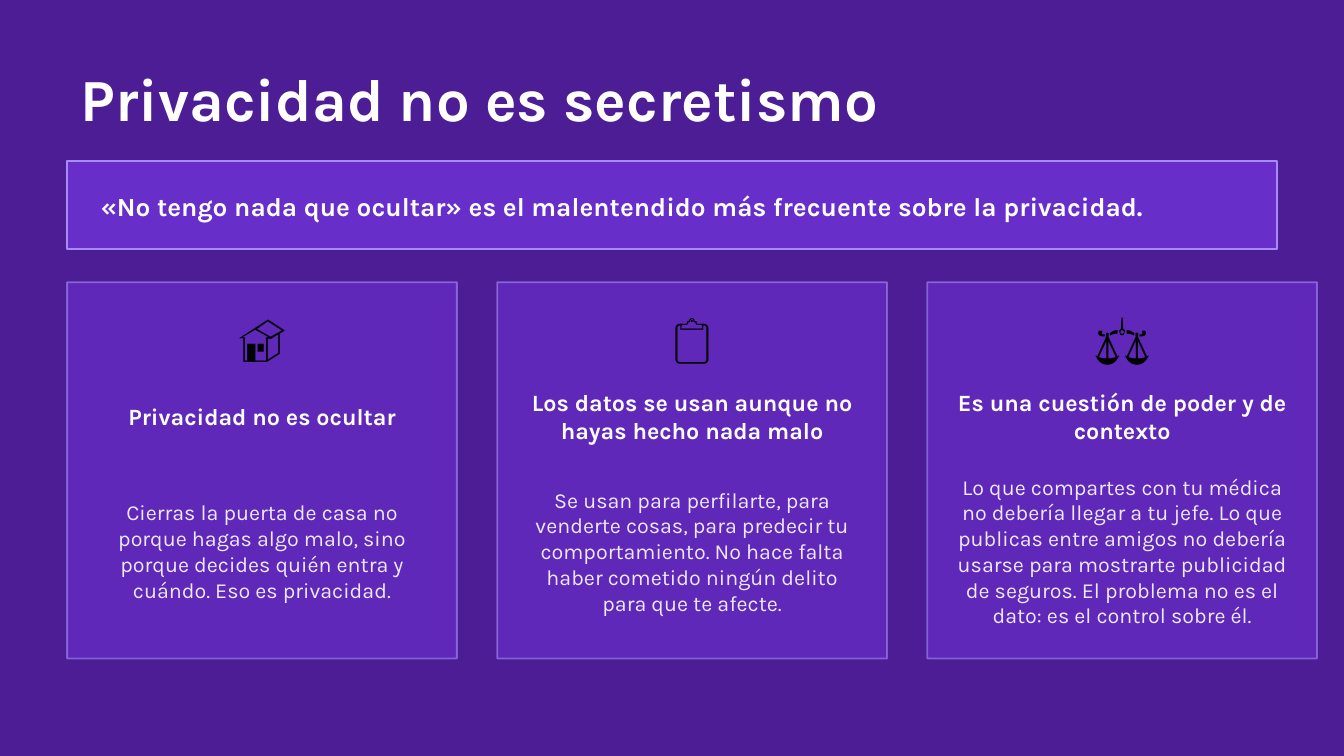
from lxml import etree
from pptx import Presentation
from pptx.dml.color import RGBColor
from pptx.enum.shapes import MSO_SHAPE
from pptx.enum.text import MSO_ANCHOR, MSO_AUTO_SIZE, PP_ALIGN
from pptx.oxml.ns import qn
from pptx.util import Inches, Pt

RECTANGLE = MSO_SHAPE.RECTANGLE
MIDDLE = MSO_ANCHOR.MIDDLE
NO_AUTOFIT = MSO_AUTO_SIZE.NONE
LEFT, CENTER = PP_ALIGN.LEFT, PP_ALIGN.CENTER

TITLE_ONLY = 5
BACKGROUND = "4C1D95"
PANEL = "7C3AED"
BORDER = "A78BFA"
WHITE = "FFFFFF"
LAVENDER = "EDE9FE"
BLACK = "000000"

MARGIN = 0.5
CARD_TOP, CARD_WIDTH, CARD_HEIGHT = 2.1, 2.9, 2.8
CARD_STEP = 3.2
CARD_PADDING = 0.1

CARDS = [
    ("🏠", "Privacidad no es ocultar",
     "Cierras la puerta de casa no porque hagas algo malo, sino porque decides "
     "quién entra y cuándo. Eso es privacidad."),
    ("📋", "Los datos se usan aunque no hayas hecho nada malo",
     "Se usan para perfilarte, para venderte cosas, para predecir tu "
     "comportamiento. No hace falta haber cometido ningún delito para que te afecte."),
    ("⚖️", "Es una cuestión de poder y de contexto",
     "Lo que compartes con tu médica no debería llegar a tu jefe. Lo que publicas "
     "entre amigos no debería usarse para mostrarte publicidad de seguros. "
     "El problema no es el dato: es el control sobre él."),
]


def color(hex_code):
    return RGBColor.from_string(hex_code)


def set_opacity(fill, percent):
    """Apply an opacity to a solid fill whose colour is already set."""
    fill_color = fill._xPr.find(qn("a:solidFill"))[0]
    etree.SubElement(fill_color, qn("a:alpha"), val=str(percent * 1000))


def write_text(shape, text, size, hex_code, bold=False, align=LEFT, font_name="Karla"):
    frame = shape.text_frame
    frame.word_wrap = True
    frame.auto_size = NO_AUTOFIT
    frame.vertical_anchor = MIDDLE
    frame.text = text
    paragraph = frame.paragraphs[0]
    paragraph.alignment = align
    font = paragraph.font
    font.name = font_name
    font.size = Pt(size)
    font.bold = bold
    font.color.rgb = color(hex_code)


def add_title(slide, text):
    title = slide.shapes.title
    title.left, title.top = Inches(MARGIN), Inches(0.35)
    title.width, title.height = Inches(9), Inches(0.75)
    write_text(title, text, 32, WHITE, bold=True)


def add_label(slide, left, top, width, height, text, size, hex_code, **style):
    box = slide.shapes.add_textbox(
        Inches(left), Inches(top), Inches(width), Inches(height))
    write_text(box, text, size, hex_code, **style)


def add_panel(slide, left, top, width, height, fill_opacity, line_opacity=100):
    panel = slide.shapes.add_shape(
        RECTANGLE, Inches(left), Inches(top), Inches(width), Inches(height))
    panel.shadow.inherit = False
    panel.fill.solid()
    panel.fill.fore_color.rgb = color(PANEL)
    set_opacity(panel.fill, fill_opacity)
    panel.line.width = Pt(1)
    panel.line.color.rgb = color(BORDER)
    if line_opacity < 100:
        set_opacity(panel.line.fill, line_opacity)


def add_banner(slide, text):
    add_panel(slide, MARGIN, 1.2, 9, 0.65, fill_opacity=60)
    add_label(slide, MARGIN + 0.15, 1.28, 8.7, 0.5, text, 14, WHITE, bold=True)


def add_card(slide, left, icon, heading, body):
    text_left = left + CARD_PADDING
    text_width = CARD_WIDTH - 2 * CARD_PADDING
    add_panel(slide, left, CARD_TOP, CARD_WIDTH, CARD_HEIGHT,
              fill_opacity=40, line_opacity=60)
    add_label(slide, left, 2.2, CARD_WIDTH, 0.6, icon, 26, BLACK,
              align=CENTER, font_name="Calibri")
    add_label(slide, text_left, 2.85, text_width, 0.5, heading, 12.5, WHITE,
              bold=True, align=CENTER)
    add_label(slide, text_left, 3.4, text_width, 1.4, body, 11.5, LAVENDER,
              align=CENTER)


def main():
    presentation = Presentation()
    presentation.slide_width = Inches(10)
    presentation.slide_height = Inches(10) * 9 // 16
    slide = presentation.slides.add_slide(presentation.slide_layouts[TITLE_ONLY])
    slide.background.fill.solid()
    slide.background.fill.fore_color.rgb = color(BACKGROUND)

    add_title(slide, "Privacidad no es secretismo")
    add_banner(slide, "«No tengo nada que ocultar» es el malentendido más "
                      "frecuente sobre la privacidad.")
    for index, (icon, heading, body) in enumerate(CARDS):
        add_card(slide, MARGIN + index * CARD_STEP, icon, heading, body)

    presentation.save("out.pptx")


if __name__ == "__main__":
    main()
